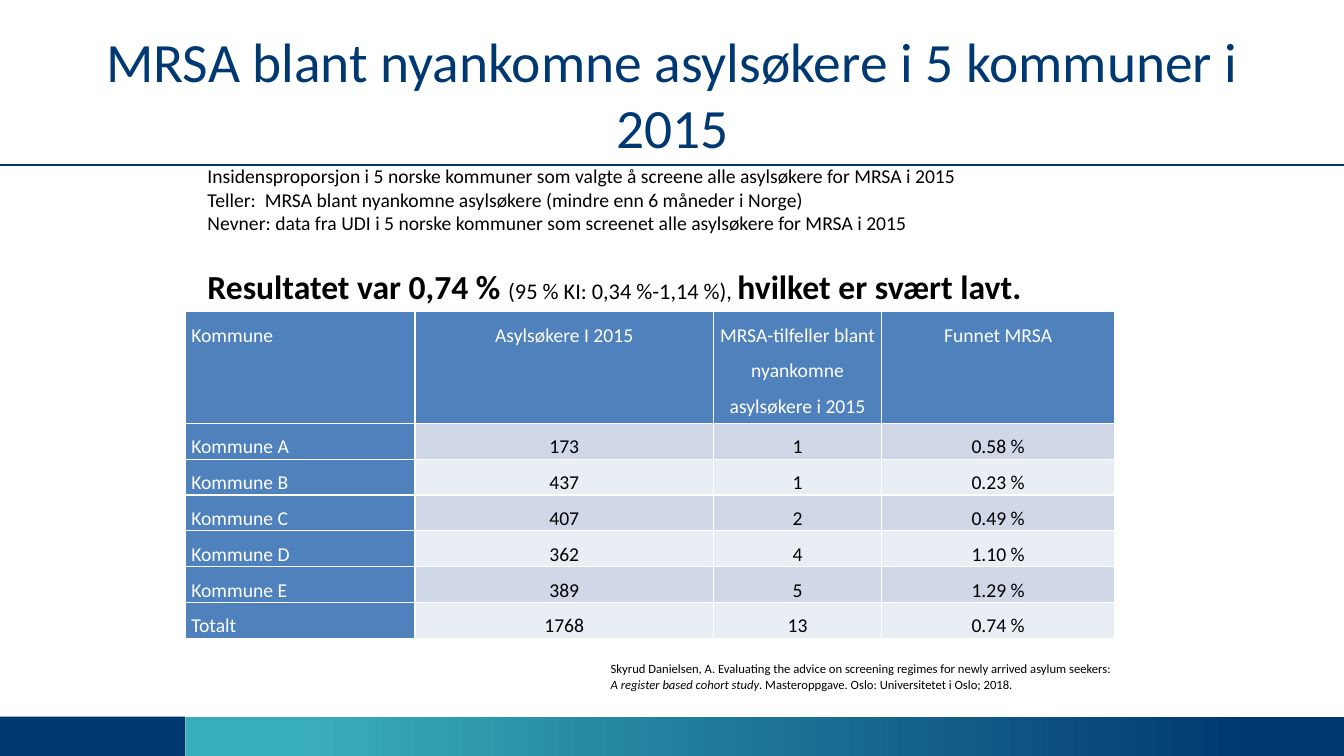
"""Builds a slide on MRSA among newly arrived asylum seekers in five municipalities."""
from dataclasses import dataclass
from lxml.etree import SubElement
from pptx import Presentation
from pptx.dml.color import RGBColor
from pptx.enum.shapes import MSO_CONNECTOR, MSO_SHAPE
from pptx.enum.text import MSO_ANCHOR, MSO_AUTO_SIZE, PP_ALIGN
from pptx.oxml.ns import qn
from pptx.util import Cm, Pt

COLOURS = {
    "navy": "003871",
    "teal": "39AEBB",
    "header": "4F81BD",
    "band_dark": "D0D8E8",
    "band_light": "E9EDF4",
    "white": "FFFFFF",
    "black": "000000",
}
FONT = "Calibri"
SLIDE_WIDTH, SLIDE_HEIGHT = 33.87, 19.05
FOOTER_TOP, FOOTER_SPLIT = 18.06, 4.67
COLUMN_WIDTHS = (5.79, 7.52, 4.24, 5.87)
HEADER_HEIGHT, ROW_HEIGHT = 2.82, 0.86
TABLE_ROWS = (
    ("Kommune", "Asylsøkere I 2015",
     "MRSA-tilfeller blant nyankomne asylsøkere i 2015", "Funnet MRSA"),
    ("Kommune A", "173", "1", "0.58 %"),
    ("Kommune B", "437", "1", "0.23 %"),
    ("Kommune C", "407", "2", "0.49 %"),
    ("Kommune D", "362", "4", "1.10 %"),
    ("Kommune E", "389", "5", "1.29 %"),
    ("Totalt", "1768", "13", "0.74 %"),
)


@dataclass(frozen=True)
class TextRun:
    """A piece of text with its own formatting."""
    text: str
    size: float = 14
    colour: str = "black"
    bold: bool = False
    italic: bool = False


@dataclass(frozen=True)
class TextLine:
    """A paragraph made of runs."""
    runs: tuple[TextRun, ...]
    space_before: float = 0


@dataclass(frozen=True)
class TextBlock:
    """A text box with its place in centimetres."""
    left: float
    top: float
    width: float
    height: float
    lines: tuple[TextLine, ...]
    wrap: bool = True


@dataclass(frozen=True)
class FooterBar:
    """A footer rectangle with one or two fill colours."""
    left: float
    width: float
    colours: tuple[str, ...]


TEXT_BLOCKS = (
    TextBlock(4.98, 4.01, 24.46, 3.84, (
        TextLine((TextRun("Insidensproporsjon i 5 norske kommuner som valgte å screene "
                          "alle asylsøkere for MRSA i 2015"),)),
        TextLine((TextRun("Teller:  MRSA blant nyankomne asylsøkere "
                          "(mindre enn 6 måneder i Norge)"),)),
        TextLine((TextRun("Nevner: data fra UDI i 5 norske kommuner som screenet "
                          "alle asylsøkere for MRSA i 2015"),)),
        TextLine((TextRun("Resultatet var 0,74 % ", 24, bold=True),
                  TextRun("(95 % KI: 0,34 %-1,14 %), ", 16),
                  TextRun("hvilket er svært lavt.", 24, bold=True)), 22),
    )),
    TextBlock(15.14, 16.54, 13.39, 1.02, (
        TextLine((TextRun("Skyrud Danielsen, A. Evaluating the advice on screening regimes "
                          "for newly arrived asylum seekers:", 9),)),
        TextLine((TextRun("A register based cohort study", 9, italic=True),
                  TextRun(". Masteroppgave. Oslo: Universitetet i Oslo; 2018.", 9))),
    ), wrap=False),
)
FOOTER_BARS = (
    FooterBar(0, FOOTER_SPLIT, ("navy",)),
    FooterBar(FOOTER_SPLIT, SLIDE_WIDTH - FOOTER_SPLIT, ("teal", "navy")),
)


def rgb(name: str) -> RGBColor:
    """Return the named colour."""
    return RGBColor.from_string(COLOURS[name])


def add_run(paragraph, text_run: TextRun) -> None:
    """Add one formatted run to a paragraph."""
    run = paragraph.add_run()
    run.text = text_run.text
    run.font.name = FONT
    run.font.size = Pt(text_run.size)
    run.font.bold = text_run.bold
    run.font.italic = text_run.italic
    run.font.color.rgb = rgb(text_run.colour)


def add_footer_bar(slide, bar: FooterBar) -> None:
    """Draw a solid or gradient footer bar."""
    shape = slide.shapes.add_shape(MSO_SHAPE.RECTANGLE, Cm(bar.left), Cm(FOOTER_TOP),
                                   Cm(bar.width), Cm(SLIDE_HEIGHT - FOOTER_TOP))
    shape.shadow.inherit = False
    shape.line.fill.background()
    if len(bar.colours) == 1:
        shape.fill.solid()
        shape.fill.fore_color.rgb = rgb(bar.colours[0])
        return
    shape.fill.gradient()
    shape.fill.gradient_angle = 0
    for stop, colour, position in zip(shape.fill.gradient_stops, bar.colours, (0.1, 0.92)):
        stop.color.rgb = rgb(colour)
        stop.position = position


def add_title_rule(slide) -> None:
    """Draw the line below the title."""
    connector = slide.shapes.add_connector(MSO_CONNECTOR.STRAIGHT, 0, Cm(4.16),
                                           Cm(SLIDE_WIDTH), Cm(4.16))
    connector.line.color.rgb = rgb("navy")
    connector.line.width = Pt(2)
    SubElement(connector._element.spPr, qn("a:effectLst"))


def add_title(slide, text: str) -> None:
    """Place and fill the title placeholder."""
    title = slide.shapes.title
    title.left, title.top, title.width, title.height = Cm(1.7), Cm(0.76), Cm(30.48), Cm(3.18)
    frame = title.text_frame
    frame.auto_size = MSO_AUTO_SIZE.NONE
    frame.vertical_anchor = MSO_ANCHOR.MIDDLE
    frame.paragraphs[0].alignment = PP_ALIGN.CENTER
    add_run(frame.paragraphs[0], TextRun(text, 39.6, "navy"))


def add_text_block(slide, block: TextBlock) -> None:
    """Add a text box with its paragraphs."""
    box = slide.shapes.add_textbox(Cm(block.left), Cm(block.top),
                                   Cm(block.width), Cm(block.height))
    frame = box.text_frame
    frame.word_wrap = block.wrap
    for index, line in enumerate(block.lines):
        paragraph = frame.add_paragraph() if index else frame.paragraphs[0]
        if line.space_before:
            paragraph.space_before = Pt(line.space_before)
        for text_run in line.runs:
            add_run(paragraph, text_run)


def add_cell_borders(cell) -> None:
    """Give a cell thin white borders."""
    properties = cell._tc.get_or_add_tcPr()
    for side in ("lnL", "lnR", "lnT", "lnB"):
        border = SubElement(properties, qn(f"a:{side}"), w=str(Pt(1)))
        fill = SubElement(border, qn("a:solidFill"))
        SubElement(fill, qn("a:srgbClr"), val=COLOURS["white"])


def fill_cell(cell, text: str, row: int, column: int) -> None:
    """Write and format one table cell."""
    is_heading = row == 0 or column == 0
    band = "band_dark" if row % 2 else "band_light"
    cell.margin_left = cell.margin_right = Cm(0.15)
    cell.margin_top = cell.margin_bottom = 0
    add_cell_borders(cell)
    cell.fill.solid()
    cell.fill.fore_color.rgb = rgb("header" if is_heading else band)
    paragraph = cell.text_frame.paragraphs[0]
    paragraph.alignment = PP_ALIGN.CENTER if column else PP_ALIGN.LEFT
    paragraph.line_spacing = 1.5
    add_run(paragraph, TextRun(text, colour="white" if is_heading else "black"))


def add_result_table(slide) -> None:
    """Add the table of municipalities."""
    heights = [HEADER_HEIGHT] + [ROW_HEIGHT] * (len(TABLE_ROWS) - 1)
    table = slide.shapes.add_table(len(TABLE_ROWS), len(COLUMN_WIDTHS), Cm(FOOTER_SPLIT),
                                   Cm(7.85), Cm(sum(COLUMN_WIDTHS)), Cm(sum(heights))).table
    table.first_row = table.horz_banding = False
    for column, width in zip(table.columns, COLUMN_WIDTHS):
        column.width = Cm(width)
    for row_index, (height, texts) in enumerate(zip(heights, TABLE_ROWS)):
        table.rows[row_index].height = Cm(height)
        for column_index, text in enumerate(texts):
            fill_cell(table.cell(row_index, column_index), text, row_index, column_index)


def main() -> None:
    """Build and save the presentation."""
    presentation = Presentation()
    presentation.slide_width, presentation.slide_height = Cm(SLIDE_WIDTH), Cm(SLIDE_HEIGHT)
    slide = presentation.slides.add_slide(presentation.slide_layouts[5])
    for bar in FOOTER_BARS:
        add_footer_bar(slide, bar)
    add_title_rule(slide)
    add_title(slide, "MRSA blant nyankomne asylsøkere i 5 kommuner i 2015")
    add_result_table(slide)
    for block in TEXT_BLOCKS:
        add_text_block(slide, block)
    presentation.save("out.pptx")


if __name__ == "__main__":
    main()
